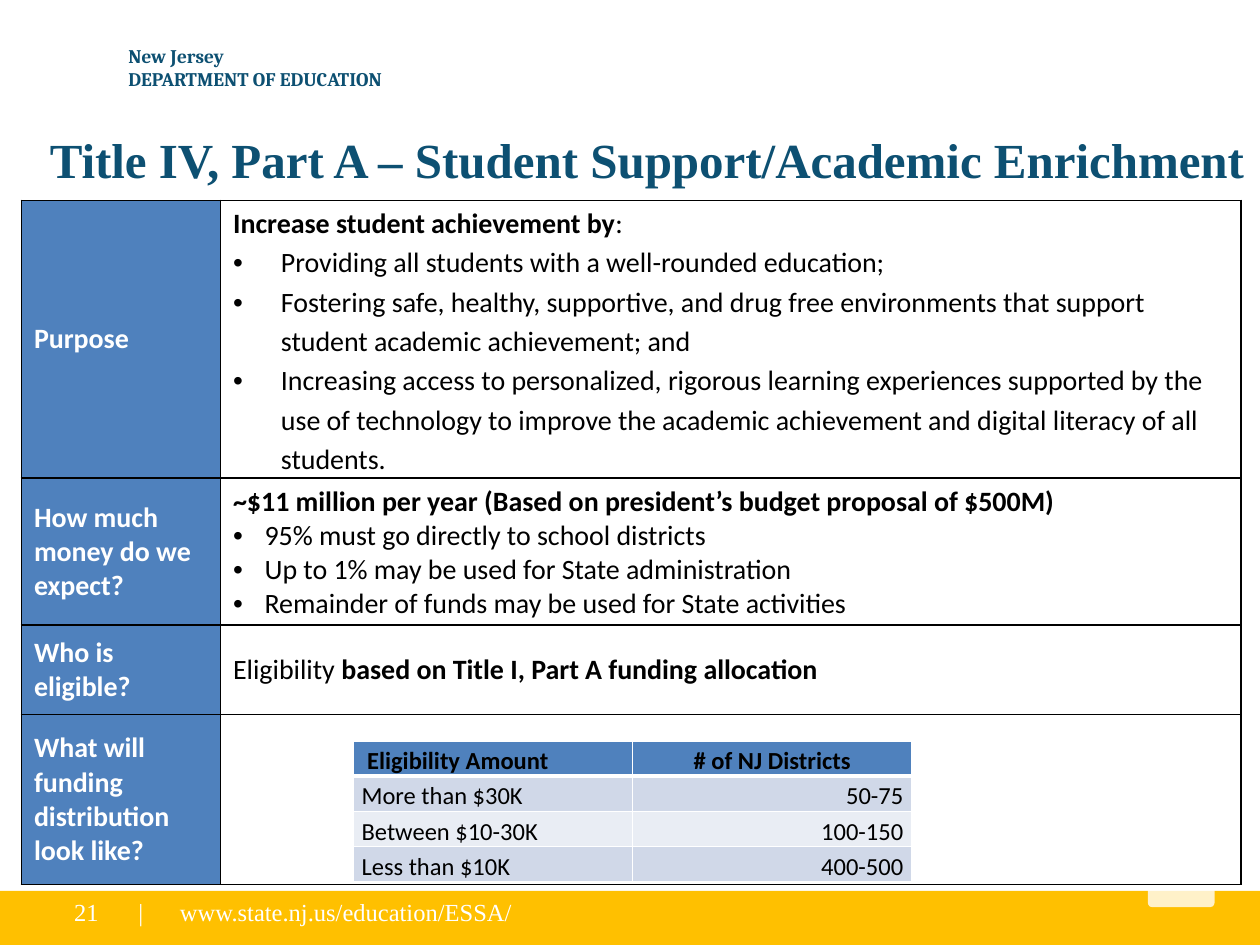
"""Build the Title IV, Part A funding slide."""
from dataclasses import dataclass
from typing import NamedTuple

from lxml import etree
from pptx import Presentation
from pptx.dml.color import RGBColor
from pptx.enum.shapes import MSO_SHAPE
from pptx.enum.text import MSO_ANCHOR, PP_ALIGN
from pptx.oxml.ns import qn
from pptx.util import Inches, Pt

RECTANGLE, ROUNDED = MSO_SHAPE.RECTANGLE, MSO_SHAPE.ROUNDED_RECTANGLE
TOP, MIDDLE, BOTTOM = MSO_ANCHOR.TOP, MSO_ANCHOR.MIDDLE, MSO_ANCHOR.BOTTOM
LEFT, CENTER, RIGHT = PP_ALIGN.LEFT, PP_ALIGN.CENTER, PP_ALIGN.RIGHT


class Style(NamedTuple):
    font: str
    size: int
    color: str
    bold: bool = False


@dataclass(frozen=True)
class Theme:
    blue: str = "4F81BD"
    gold: str = "FFC000"
    white: str = "FFFFFF"
    black: str = "000000"
    bands: tuple = ("D0D8E8", "E9EDF4")
    title: Style = Style("Times New Roman", 28, "0D5072", True)
    agency: Style = Style("Cambria", 11, "0D5072", True)
    footer: Style = Style("Times New Roman", 14, "FFFFFF")
    label: Style = Style("Calibri", 16, "FFFFFF", True)
    body: Style = Style("Calibri", 16, "000000")
    strong: Style = Style("Calibri", 16, "000000", True)
    amount: Style = Style("Calibri", 14, "000000")
    heading: Style = Style("Calibri", 14, "000000", True)


class Run(NamedTuple):
    text: str
    style: Style


class Line(NamedTuple):
    runs: tuple
    indent: float = 0
    spacing: float = 1
    align: PP_ALIGN = LEFT
    tab: float = 0
    break_before: bool = False


class Box(NamedTuple):
    left: float
    top: float
    width: float
    height: float

    def lengths(self) -> list:
        return [Inches(value) for value in self]


THEME = Theme()


def line(text: str, style: Style, **options) -> Line:
    return Line((Run(text, style),), **options)


def write(frame, lines: list) -> None:
    for index, item in enumerate(lines):
        paragraph = frame.add_paragraph() if index else frame.paragraphs[0]
        paragraph.alignment = item.align
        paragraph.line_spacing = item.spacing
        properties = paragraph._p.get_or_add_pPr()
        if item.indent:
            properties.set("marL", str(Inches(item.indent)))
            properties.set("indent", str(-Inches(item.indent)))
            etree.SubElement(properties, qn("a:buFont"), typeface="Arial")
            etree.SubElement(properties, qn("a:buChar"), char="•")
        if item.tab:
            tabs = etree.SubElement(properties, qn("a:tabLst"))
            etree.SubElement(tabs, qn("a:tab"), pos=str(Inches(item.tab)), algn="l")
        paragraph.font.size = Pt(item.runs[0].style.size)
        if item.break_before:
            paragraph.add_line_break()
        for text, style in item.runs:
            run = paragraph.add_run()
            run.text = text
            run.font.name, run.font.size, run.font.bold = style.font, Pt(style.size), style.bold
            run.font.color.rgb = RGBColor.from_string(style.color)


def add_text(slide, box: Box, lines: list, anchor: MSO_ANCHOR = TOP, wrap: bool = True) -> None:
    frame = slide.shapes.add_textbox(*box.lengths()).text_frame
    frame.word_wrap, frame.vertical_anchor = wrap, anchor
    write(frame, lines)


def add_panel(slide, kind: MSO_SHAPE, box: Box, color: str, opacity: int = 100) -> None:
    shape = slide.shapes.add_shape(kind, *box.lengths())
    shape.shadow.inherit = False
    shape.fill.solid()
    shape.fill.fore_color.rgb = RGBColor.from_string(color)
    shape.line.fill.background()
    if opacity < 100:
        tint = shape._element.spPr.find(".//" + qn("a:srgbClr"))
        etree.SubElement(tint, qn("a:alpha"), val=str(opacity * 1000))


def add_grid(slide, left: float, top: float, columns: list, rows: list):
    box = Box(left, top, sum(columns), sum(rows))
    table = slide.shapes.add_table(len(rows), len(columns), *box.lengths()).table
    table.first_row = table.horz_banding = False
    for column, width in zip(table.columns, columns):
        column.width = Inches(width)
    for row, height in zip(table.rows, rows):
        row.height = Inches(height)
    return table


def fill_cell(cell, lines: list, color: str, border: str, anchor: MSO_ANCHOR,
              top: int = 1, bottom: int = 1) -> None:
    cell.vertical_anchor = anchor
    if color:
        cell.fill.solid()
        cell.fill.fore_color.rgb = RGBColor.from_string(color)
    else:
        cell.fill.background()
    properties = cell._tc.get_or_add_tcPr()
    for index, (side, width) in enumerate(zip("LRTB", (1, 1, top, bottom))):
        edge = etree.Element(qn(f"a:ln{side}"), w=str(Pt(width)))
        solid = etree.SubElement(edge, qn("a:solidFill"))
        etree.SubElement(solid, qn("a:srgbClr"), val=border)
        properties.insert(index, edge)
    write(cell.text_frame, lines)


def add_program_table(slide) -> None:
    goals = (
        "Providing all students with a well-rounded education;",
        "Fostering safe, healthy, supportive, and drug free environments that support "
        "student academic achievement; and",
        "Increasing access to personalized, rigorous learning experiences supported by the "
        "use of technology to improve the academic achievement and digital literacy of all students.",
    )
    shares = (
        "95% must go directly to school districts",
        "Up to 1% may be used for State administration",
        "Remainder of funds may be used for State activities",
    )
    purpose = [Line((Run("Increase student achievement by", THEME.strong), Run(":", THEME.body)))]
    purpose += [line(goal, THEME.body, indent=0.38, spacing=1.15) for goal in goals]
    money = [line("~$11 million per year (Based on president’s budget proposal of $500M)", THEME.strong)]
    money += [line(share, THEME.body, indent=0.25) for share in shares]
    eligible = [Line((Run("Eligibility ", THEME.body),
                      Run("based on Title I, Part A funding allocation", THEME.strong)))]
    topics = (
        ("Purpose", purpose),
        ("How much money do we expect?", money),
        ("Who is eligible?", eligible),
        ("What will funding distribution look like?", []),
    )
    table = add_grid(slide, 0.17, 1.59, [1.58, 8.1], [2.13, 1.14, 0.71, 1.35])
    for index, (topic, answer) in enumerate(topics):
        fill_cell(table.cell(index, 0), [line(topic, THEME.label)], THEME.blue, THEME.black, MIDDLE)
        fill_cell(table.cell(index, 1), answer, "", THEME.black, MIDDLE)


def add_district_table(slide) -> None:
    records = (
        (" Eligibility Amount", "# of NJ Districts"),
        ("More than $30K", "50-75"),
        ("Between $10-30K", "100-150"),
        ("Less than $10K", "400-500"),
    )
    table = add_grid(slide, 2.8, 5.88, [2.22] * 2, [0.28] * len(records))
    for row, record in enumerate(records):
        style = THEME.amount if row else THEME.heading
        color = THEME.bands[(row - 1) % 2] if row else THEME.blue
        for column, text in enumerate(record):
            cell = table.cell(row, column)
            cell.margin_left = cell.margin_right = Inches(0.07)
            cell.margin_top = cell.margin_bottom = 0
            align = (LEFT, RIGHT if row else CENTER)[column]
            fill_cell(cell, [line(text, style, spacing=1.15, align=align)], color, THEME.white,
                      BOTTOM, top=3 if row == 1 else 1, bottom=1 if row else 3)


def main() -> None:
    presentation = Presentation()
    presentation.slide_width, presentation.slide_height = Inches(10), Inches(7.5)
    slide = presentation.slides.add_slide(presentation.slide_layouts[6])
    add_panel(slide, RECTANGLE, Box(0, 7.07, 10, 0.45), THEME.gold)
    agency = [line(text, THEME.agency) for text in ("New Jersey", "DEPARTMENT OF EDUCATION")]
    add_text(slide, Box(0.92, 0.3, 2.5, 0.47), agency, MIDDLE)
    address = line("|\twww.state.nj.us/education/ESSA/", THEME.footer, tab=0.33)
    add_text(slide, Box(1, 7.07, 3.19, 0.34), [address], wrap=False)
    add_text(slide, Box(0.49, 7.07, 0.43, 0.34), [line("21", THEME.footer)], wrap=False)
    add_panel(slide, ROUNDED, Box(9.11, 6.98, 0.53, 0.22), THEME.white, opacity=79)
    title = line("Title IV, Part A – Student Support/Academic Enrichment", THEME.title,
                 align=CENTER, break_before=True)
    add_text(slide, Box(-0.2, 0.55, 10.67, 0.95), [title], MIDDLE)
    add_program_table(slide)
    add_district_table(slide)
    presentation.save("out.pptx")


if __name__ == "__main__":
    main()
